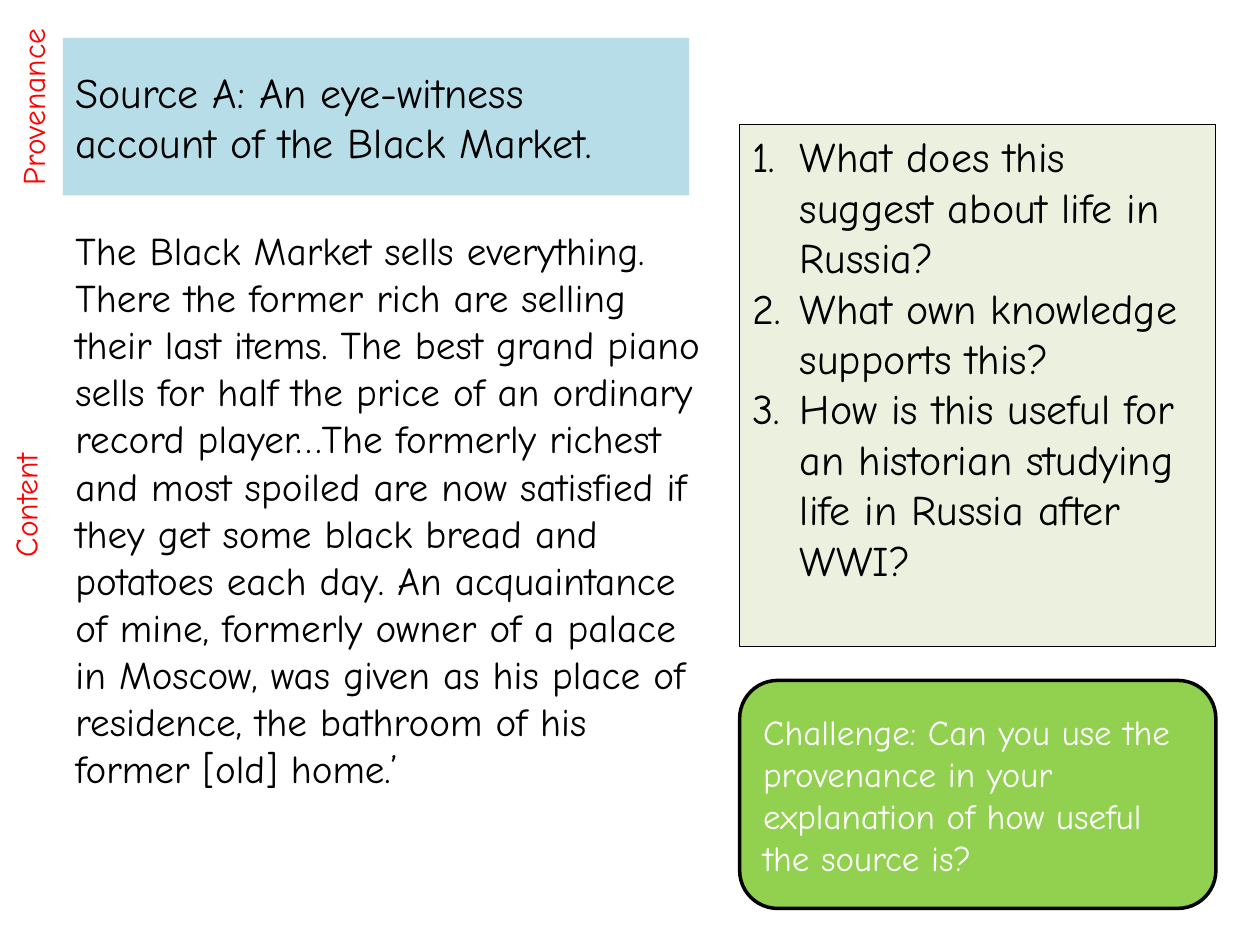
import pptx
import pptx.util
import pptx.dml.color
import pptx.enum.shapes
import pptx.enum.text
from lxml import etree

Inches, Pt = pptx.util.Inches, pptx.util.Pt
SHAPE = pptx.enum.shapes.MSO_SHAPE
ANCHOR = pptx.enum.text.MSO_ANCHOR
ALIGN = pptx.enum.text.PP_ALIGN

FONT = "Comic Neue"
COLORS = {"black": "000000", "white": "FFFFFF", "red": "FF0000",
          "blue": "B7DEE8", "cream": "EBF1DE", "green": "92D050"}

TITLE = "Source A: An eye-witness account of the Black Market."
QUOTE = (
    "The Black Market sells everything. There the former rich are selling "
    "their last items. The best grand piano sells for half the price of an "
    "ordinary record player…The formerly richest and most spoiled are now "
    "satisfied if they get some black bread and potatoes each day. An "
    "acquaintance of mine, formerly owner of a palace in Moscow, was given "
    "as his place of residence, the bathroom of his former [old] home.’")
TASKS = ["What does this suggest about life in Russia?",
         "What own knowledge supports this?",
         "How is this useful for an historian studying life in Russia after WWI?"]
DARE = ("Challenge: Can you use the provenance in your explanation of how "
        "useful the source is?")
# text, left, top, alignment
LABELS = [("Content", -1.53, 3.81, ALIGN.CENTER),
          ("Provenance", -1.47, 1.66, ALIGN.RIGHT)]

LEFT, RIGHT, SIDE = 0.5, 5.87, 3.78


def color(name):
    return pptx.dml.color.RGBColor.from_string(COLORS[name])


def write(shape, lines, size, ink="black", anchor=ANCHOR.TOP, align=ALIGN.LEFT):
    frame = shape.text_frame
    frame.word_wrap = True
    frame.vertical_anchor = anchor
    frame.text = "\n".join(lines)
    for para in frame.paragraphs:
        para.alignment = align
        para.font.name = FONT
        para.font.size = Pt(size)
        para.font.color.rgb = color(ink)


def add_box(slide, kind, place, fill, line=None):
    box = slide.shapes.add_shape(kind, *map(Inches, place))
    box.shadow.inherit = False
    box.fill.solid()
    box.fill.fore_color.rgb = color(fill)
    if line:
        box.line.color.rgb = color("black")
        box.line.width = Pt(line)
    else:
        box.line.fill.background()
    return box


def add_text(slide, place):
    return slide.shapes.add_textbox(*map(Inches, place))


def number(para, indent):
    """Give a paragraph an automatic number with a hanging indent."""
    props = para._p.get_or_add_pPr()
    props.set("marL", str(Inches(indent)))
    props.set("indent", str(-Inches(indent)))
    mark = etree.Element(pptx.oxml.ns.qn("a:buAutoNum"), type="arabicPeriod")
    first = props.find(pptx.oxml.ns.qn("a:defRPr"))
    if first is None:
        props.append(mark)
    else:
        first.addprevious(mark)


def main():
    deck = pptx.Presentation()
    deck.slide_width, deck.slide_height = Inches(10), Inches(7.5)
    slide = deck.slides.add_slide(deck.slide_layouts[6])

    title = add_box(slide, SHAPE.RECTANGLE, (LEFT, 0.3, 4.97, 1.25), "blue")
    write(title, [TITLE], 24, anchor=ANCHOR.MIDDLE)

    write(add_text(slide, (LEFT, 1.75, 5.21, 4.95)), [QUOTE], 22.4)

    tasks = add_box(slide, SHAPE.RECTANGLE, (RIGHT, 0.99, SIDE, 4.14), "cream", 0.75)
    write(tasks, TASKS, 24)
    for para in tasks.text_frame.paragraphs:
        number(para, 0.38)

    dare = add_box(slide, SHAPE.ROUNDED_RECTANGLE, (RIGHT, 5.4, SIDE, 1.81), "green", 2)
    write(dare, [DARE], 20, "white", ANCHOR.MIDDLE)

    for text, left, top, align in LABELS:
        label = add_text(slide, (left, top, 3.46, 0.4))
        label.rotation = 270
        write(label, [text], 18, "red", align=align)

    deck.save("out.pptx")


if __name__ == "__main__":
    main()
